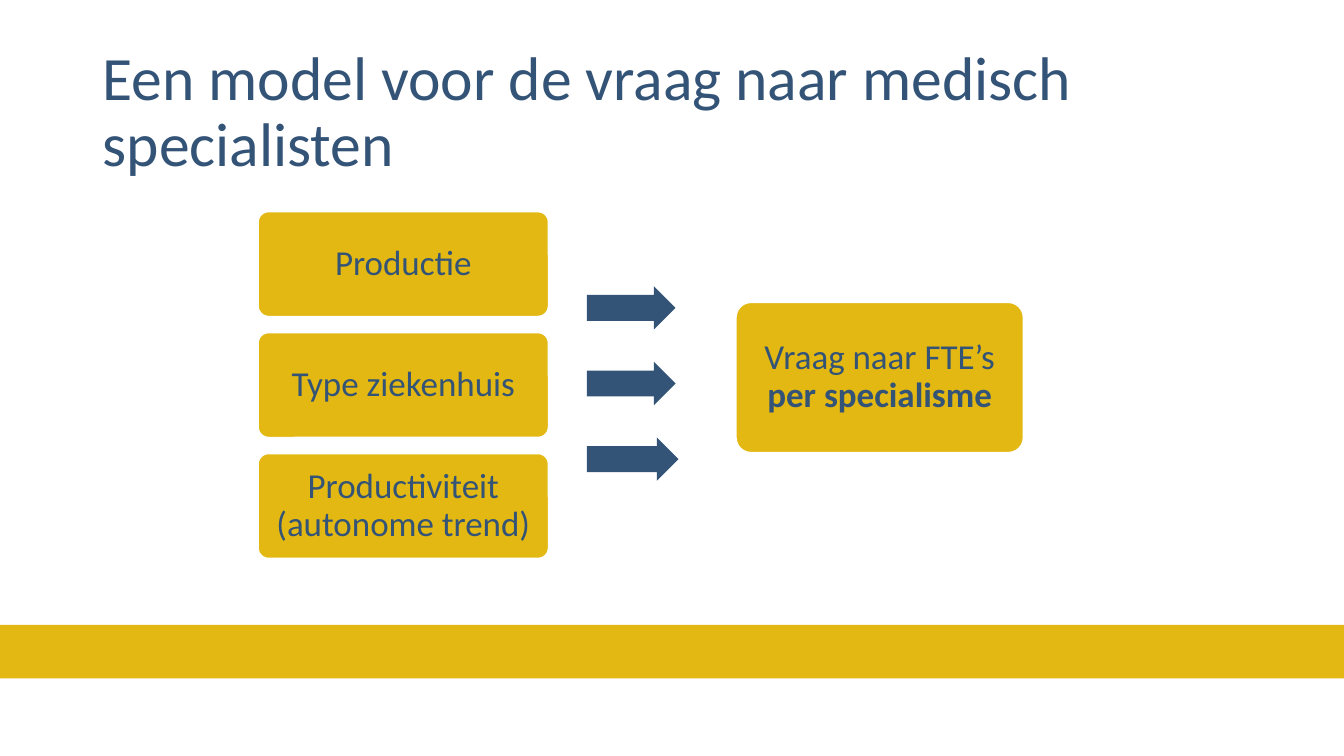
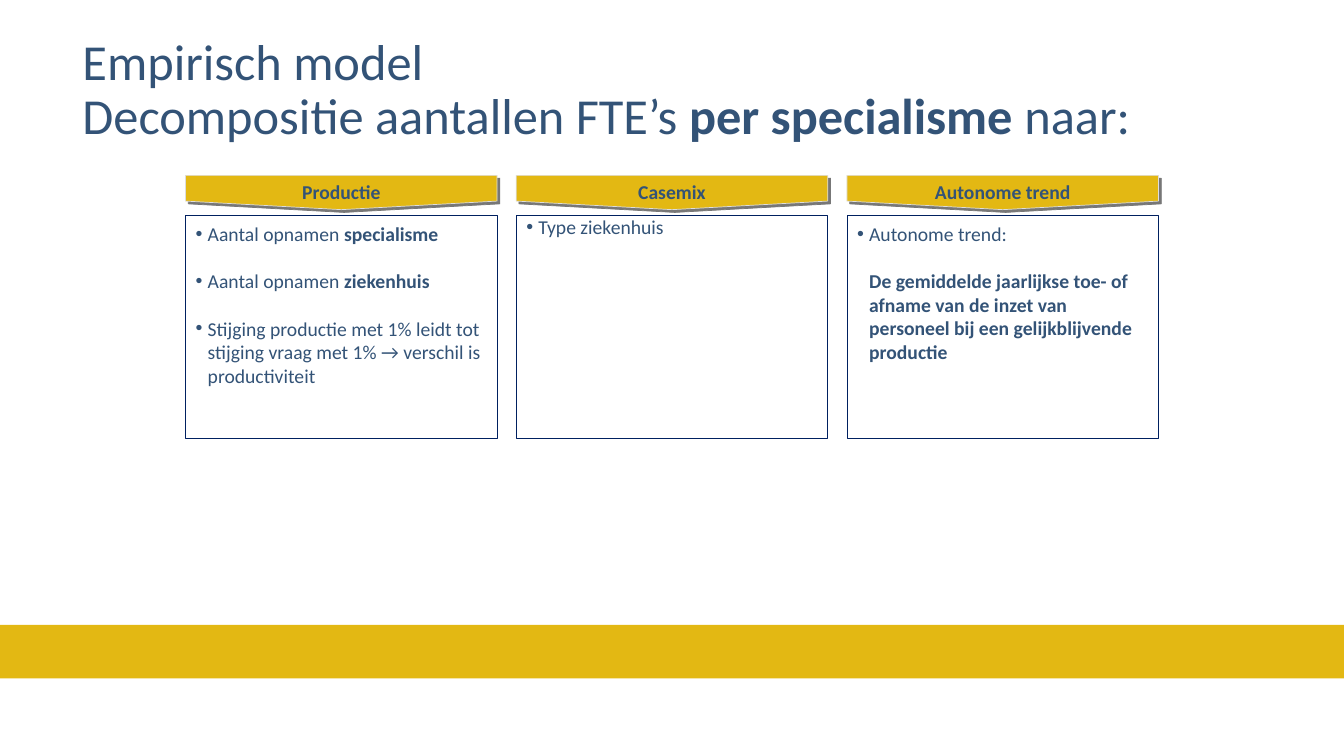
from lxml import etree
from pptx import Presentation
from pptx.dml.color import RGBColor
from pptx.enum.shapes import MSO_SHAPE
from pptx.enum.text import MSO_ANCHOR, PP_ALIGN
from pptx.oxml import parse_xml
from pptx.oxml.ns import nsdecls, qn
from pptx.util import Inches, Pt

GOLD = RGBColor(0xE3, 0xB8, 0x13)
BLUE = RGBColor(0x33, 0x53, 0x77)
NAVY = RGBColor(0x00, 0x20, 0x60)
WHITE = RGBColor(0xFF, 0xFF, 0xFF)
LIGHT_GREY = RGBColor(0xDD, 0xDD, 0xDD)
FONT = "Calibri"
SLIDE_WIDTH, SLIDE_HEIGHT = 13.33, 7.5

HEADER_SHADOW = (
    f'<a:effectLst {nsdecls("a")}>'
    '<a:outerShdw dist="35560" dir="2700000" algn="ctr" rotWithShape="0">'
    '<a:srgbClr val="777777"/></a:outerShdw></a:effectLst>'
)

# Paragraphs are lists of lines, a line is a list of (text, bold) runs.
INPUTS = (
    [[("Productie", False)]],
    [[("Type ziekenhuis", False)]],
    [[("Productiviteit", False)], [("(autonome trend)", False)]],
)
OUTPUT = [[("Vraag naar FTE’s ", False), ("per specialisme", True)]]

# Heading, top inset of the body, and body paragraphs as (bulleted, lines).
COLUMNS = (
    ("Productie", 0.06, (
        (True, [[("Aantal opnamen ", False), ("specialisme", True)]]),
        (True, [[("Aantal opnamen ", False), ("ziekenhuis", True)]]),
        (True, [[("Stijging productie met 1% leidt tot stijging vraag met 1% "
                  "→ verschil is productiviteit", False)]]),
    )),
    ("Casemix", -0.01, ((True, [[("Type ziekenhuis", False)]]),)),
    ("Autonome trend", 0.06, (
        (True, [[("Autonome trend:", False)]]),
        (False, [[("De gemiddelde jaarlijkse toe- of afname van de inzet van "
                   "personeel bij een gelijkblijvende productie", True)]]),
    )),
)


def set_attributes(target, **values):
    for name, value in values.items():
        setattr(target, name, value)


def add_box(slide, kind, box, fill=None, line=None, width=1, adjustments=()):
    shape = slide.shapes.add_shape(kind, *map(Inches, box))
    shape.shadow.inherit = False
    for index, value in enumerate(adjustments):
        shape.adjustments[index] = value
    if fill is None:
        shape.fill.background()
    else:
        shape.fill.solid()
        shape.fill.fore_color.rgb = fill
    if line is None:
        shape.line.fill.background()
    else:
        shape.line.color.rgb = line
        shape.line.width = Pt(width)
    return shape


def format_frame(frame, anchor, margin_x=0, margin_y=0):
    set_attributes(frame, word_wrap=True, vertical_anchor=anchor,
                   margin_left=Inches(margin_x), margin_right=Inches(margin_x),
                   margin_top=Inches(margin_y), margin_bottom=Inches(margin_y))


def add_text_frame(slide, box, anchor, margin_x=0, margin_y=0):
    frame = slide.shapes.add_textbox(*map(Inches, box)).text_frame
    format_frame(frame, anchor, margin_x, margin_y)
    return frame


def write_lines(paragraph, lines, size, **paragraph_format):
    set_attributes(paragraph, **paragraph_format)
    for index, line in enumerate(lines):
        if index:
            paragraph.add_line_break()
        for text, bold in line:
            run = paragraph.add_run()
            run.text = text
            set_attributes(run.font, name=FONT, size=Pt(size), bold=bold)
            run.font.color.rgb = BLUE


def indent(paragraph, bulleted):
    """Hang the text 0.12 inch from the edge, with or without a bullet."""
    properties = paragraph._p.get_or_add_pPr()
    properties.set("marL", str(Inches(0.12)))
    if bulleted:
        properties.set("indent", str(-Inches(0.12)))
        etree.SubElement(properties, qn("a:buFont")).set("typeface", "Arial")
        etree.SubElement(properties, qn("a:buChar")).set("char", "•")


def add_base_slide(presentation, title, left, top, size):
    """Add a slide with the shared gold band and title style."""
    slide = presentation.slides.add_slide(presentation.slide_layouts[6])
    add_box(slide, MSO_SHAPE.RECTANGLE, (0, 6.2, SLIDE_WIDTH, 0.53), GOLD)
    frame = add_text_frame(slide, (left, top, 11.5, 1.45),
                           MSO_ANCHOR.MIDDLE, 0.1, 0.05)
    write_lines(frame.paragraphs[0], title, size, line_spacing=0.9)
    return slide


def add_model_box(slide, box, lines):
    shape = add_box(slide, MSO_SHAPE.ROUNDED_RECTANGLE, box, GOLD, WHITE,
                    adjustments=(0.1,))
    format_frame(shape.text_frame, MSO_ANCHOR.MIDDLE, 0.1, 0.1)
    write_lines(shape.text_frame.paragraphs[0], lines, 25,
                alignment=PP_ALIGN.CENTER, line_spacing=0.9)


def add_demand_model(slide, left, top):
    """Place three inputs, three arrows and the resulting demand."""
    for row, lines in enumerate(INPUTS):
        add_model_box(slide, (left, top + row * 1.2, 2.88, 1.04), lines)
    for row, width in enumerate((0.88, 0.88, 0.91)):
        add_box(slide, MSO_SHAPE.RIGHT_ARROW,
                (left + 3.26, top + 0.74 + row * 0.75, width, 0.43),
                BLUE, adjustments=(0.6, 0.5))
    add_model_box(slide, (left + 4.74, top + 0.9, 2.85, 1.49), OUTPUT)


def add_column(slide, left, top, width, heading, body_inset, paragraphs):
    """Place a downward-pointing heading above a framed list."""
    height = 0.34
    offset = (width - height) / 2
    header = add_box(slide, MSO_SHAPE.PENTAGON,
                     (left + offset, top - offset, height, width),
                     GOLD, LIGHT_GREY, 0.5, (0.25,))
    header.rotation = 90
    properties = header._element.spPr
    properties.replace(properties.find(qn("a:effectLst")),
                       parse_xml(HEADER_SHADOW))
    frame = add_text_frame(slide, (left, top + 0.02, width, 0.28),
                           MSO_ANCHOR.MIDDLE)
    write_lines(frame.paragraphs[0], [[(heading, True)]], 14,
                alignment=PP_ALIGN.CENTER)

    frame_top = top + 0.4
    add_box(slide, MSO_SHAPE.RECTANGLE, (left, frame_top, width, 2.21),
            line=NAVY, width=0.5)
    body = add_text_frame(
        slide, (left + 0.1, frame_top + body_inset, width - 0.2, 2.1),
        MSO_ANCHOR.TOP)
    for index, (bulleted, lines) in enumerate(paragraphs):
        paragraph = body.add_paragraph() if index else body.paragraphs[0]
        indent(paragraph, bulleted)
        write_lines(paragraph, lines, 14, space_before=Pt(17 if index else 0))


def main():
    presentation = Presentation()
    set_attributes(presentation, slide_width=Inches(SLIDE_WIDTH),
                   slide_height=Inches(SLIDE_HEIGHT))

    title = [[("Een model voor de vraag naar medisch specialisten", False)]]
    slide = add_base_slide(presentation, title, 0.92, 0.4, 44)
    add_demand_model(slide, 2.56, 2.1)

    title = [[("Empirisch model", False)],
             [("Decompositie aantallen FTE’s ", False),
              ("per specialisme ", True), ("naar:", False)]]
    slide = add_base_slide(presentation, title, 0.72, 0.18, 36)
    for index, column in enumerate(COLUMNS):
        add_column(slide, 1.84 + index * 3.28, 1.74, 3.09, *column)

    presentation.save("out.pptx")


if __name__ == "__main__":
    main()
